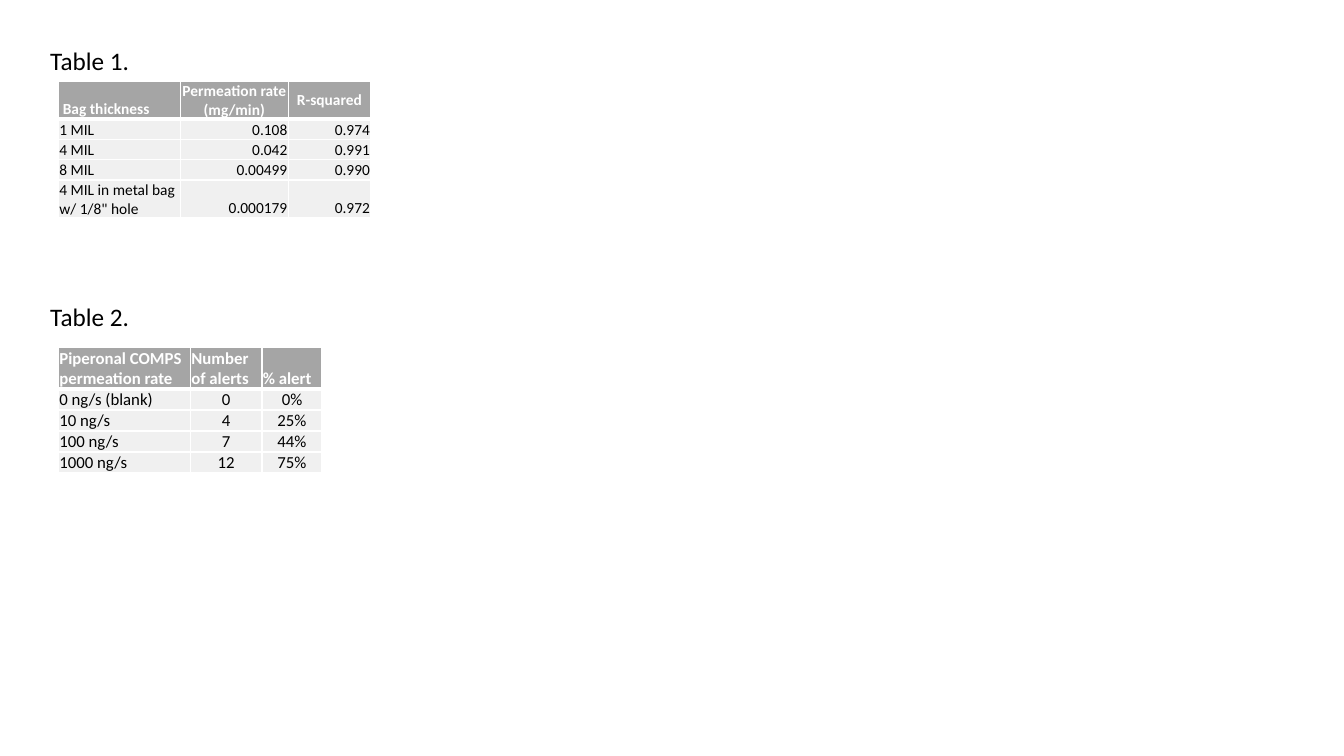
import pptx
import pptx.dml.color
import pptx.enum.text
import pptx.oxml
import pptx.oxml.ns
import pptx.util

Pt = pptx.util.Pt
RGBColor = pptx.dml.color.RGBColor
ALIGN = pptx.enum.text.PP_ALIGN
ANCHOR = pptx.enum.text.MSO_ANCHOR

WHITE = RGBColor(0xFF, 0xFF, 0xFF)
BLACK = RGBColor(0x00, 0x00, 0x00)
HEADER_GRAY = RGBColor(0xA5, 0xA5, 0xA5)
BODY_GRAY = RGBColor(0xF0, 0xF0, 0xF0)
FONT = "Calibri"

PERMEATION_ROWS = [
    [" Bag thickness", "Permeation rate (mg/min)", "R-squared"],
    ["1 MIL", "0.108", "0.974"],
    ["4 MIL", "0.042", "0.991"],
    ["8 MIL", "0.00499", "0.990"],
    ['4 MIL in metal bag w/ 1/8" hole', "0.000179", "0.972"],
]
ALERT_ROWS = [
    ["Piperonal COMPS permeation rate", "Number of alerts", "% alert"],
    ["0 ng/s (blank)", "0", "0%"],
    ["10 ng/s", "4", "25%"],
    ["100 ng/s", "7", "44%"],
    ["1000 ng/s", "12", "75%"],
]


def add_run(paragraph, text, size, color, bold=False):
    run = paragraph.add_run()
    run.text = text
    run.font.name = FONT
    run.font.size = Pt(size)
    run.font.bold = bold
    run.font.color.rgb = color


def add_caption(slide, text, left, top):
    caption = slide.shapes.add_textbox(Pt(left), Pt(top), Pt(71.3), Pt(29))
    frame = caption.text_frame
    frame.word_wrap = False
    frame.auto_size = pptx.enum.text.MSO_AUTO_SIZE.SHAPE_TO_FIT_TEXT
    add_run(frame.paragraphs[0], text, 18, BLACK)


def set_borders(cell, bottom_width):
    properties = cell._tc.get_or_add_tcPr()
    for side, width in (("L", 1), ("R", 1), ("T", 1), ("B", bottom_width)):
        properties.append(pptx.oxml.parse_xml(
            f'<a:ln{side} {pptx.oxml.ns.nsdecls("a")} w="{Pt(width)}">'
            f'<a:solidFill><a:srgbClr val="{WHITE}"/></a:solidFill></a:ln{side}>'))


def fill_cell(cell, text, size, is_header, alignment, anchor):
    cell.margin_left = cell.margin_right = cell.margin_top = Pt(0.6)
    cell.margin_bottom = 0
    cell.vertical_anchor = anchor
    set_borders(cell, 3 if is_header else 1)
    cell.fill.solid()
    cell.fill.fore_color.rgb = HEADER_GRAY if is_header else BODY_GRAY
    paragraph = cell.text_frame.paragraphs[0]
    paragraph.alignment = alignment
    add_run(paragraph, text, size, WHITE if is_header else BLACK, is_header)


def add_data_table(slide, rows, left, top, widths, heights, size,
                   header_alignments, header_anchors, value_alignment):
    table = slide.shapes.add_table(
        len(rows), len(widths), Pt(left), Pt(top), Pt(sum(widths)), Pt(sum(heights))).table
    table.horz_banding = False
    for column, width in zip(table.columns, widths):
        column.width = Pt(width)
    for row, height in zip(table.rows, heights):
        row.height = Pt(height)

    body_alignments = [ALIGN.LEFT, value_alignment, value_alignment]
    for row_index, texts in enumerate(rows):
        is_header = row_index == 0
        alignments = header_alignments if is_header else body_alignments
        anchors = header_anchors if is_header else [ANCHOR.BOTTOM] * len(widths)
        for column_index, text in enumerate(texts):
            fill_cell(table.cell(row_index, column_index), text, size, is_header,
                      alignments[column_index], anchors[column_index])


def add_permeation_section(slide, left, top):
    add_caption(slide, "Table 1.", left, top)
    add_data_table(
        slide, PERMEATION_ROWS, left + 13, top + 29,
        widths=[87.1, 77, 59], heights=[26, 14.6, 14.6, 14.6, 27], size=11,
        header_alignments=[ALIGN.LEFT, ALIGN.CENTER, ALIGN.CENTER],
        header_anchors=[ANCHOR.BOTTOM, ANCHOR.MIDDLE, ANCHOR.MIDDLE],
        value_alignment=ALIGN.RIGHT)


def add_alert_section(slide, left, top):
    add_caption(slide, "Table 2.", left, top)
    add_data_table(
        slide, ALERT_ROWS, left + 13, top + 36.7,
        widths=[94.3, 51, 43], heights=[28.8] + [15] * 4, size=12,
        header_alignments=[ALIGN.LEFT] * 3,
        header_anchors=[ANCHOR.BOTTOM] * 3,
        value_alignment=ALIGN.CENTER)


def main():
    presentation = pptx.Presentation()
    presentation.slide_width = Pt(960)
    presentation.slide_height = Pt(540)
    slide = presentation.slides.add_slide(presentation.slide_layouts[6])

    # Permeation rates by bag thickness
    add_permeation_section(slide, 28.8, 28.8)
    # Alerts by permeation rate
    add_alert_section(slide, 28.8, 211.7)

    presentation.save("out.pptx")


if __name__ == "__main__":
    main()
